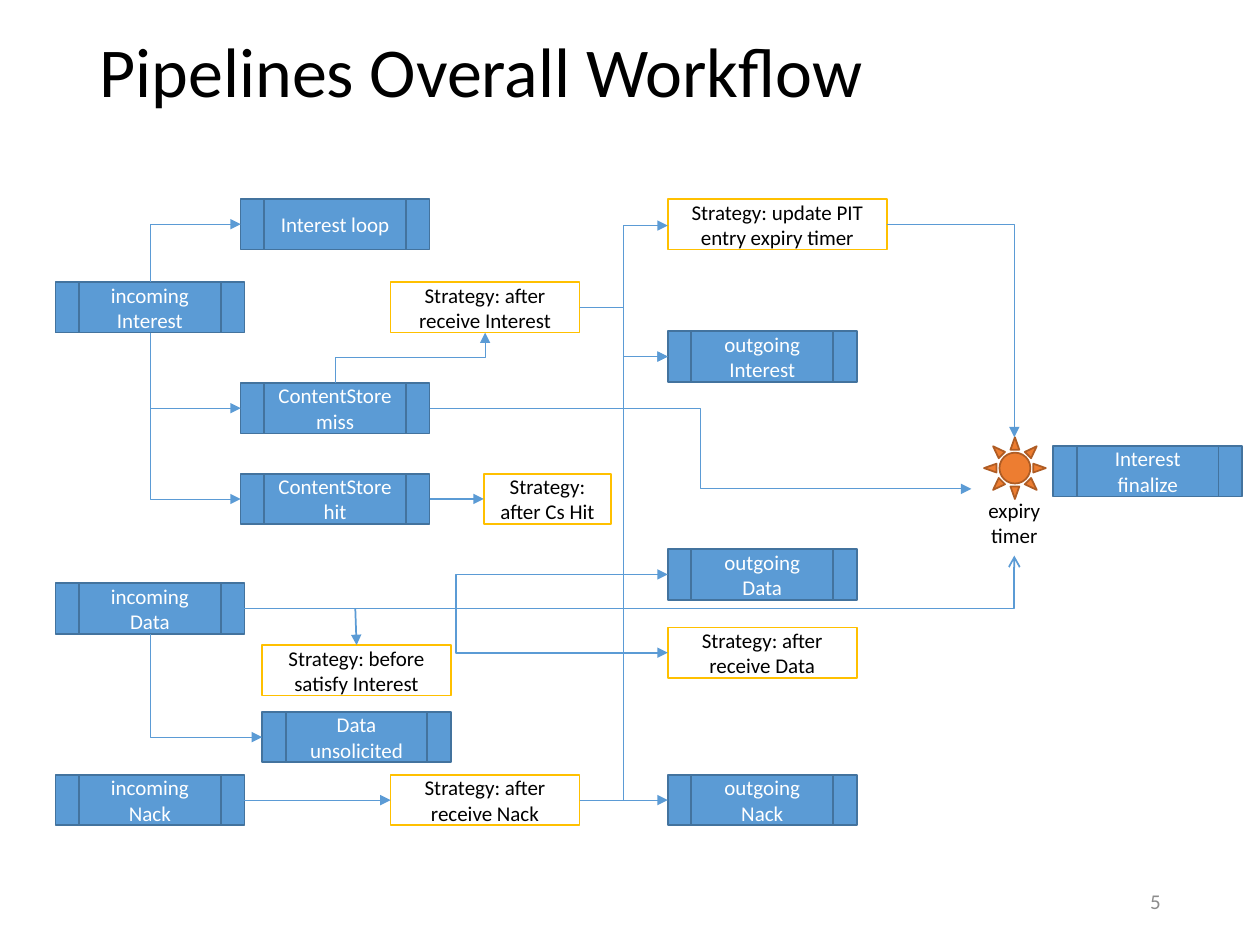
from lxml.etree import SubElement
from pptx import Presentation
from pptx.dml.color import RGBColor
from pptx.enum.shapes import MSO_CONNECTOR, MSO_SHAPE
from pptx.enum.text import MSO_ANCHOR, PP_ALIGN
from pptx.oxml.ns import qn
from pptx.util import Inches, Pt

BLACK = RGBColor(0, 0, 0)
WHITE = RGBColor(255, 255, 255)
GRAY = RGBColor(0x8C, 0x8C, 0x8C)
BLUE = RGBColor(0x5B, 0x9B, 0xD5)
DARK_BLUE = RGBColor(0x43, 0x73, 0x9E)
GOLD = RGBColor(0xFF, 0xC0, 0x00)
ORANGE = RGBColor(0xED, 0x7D, 0x31)
BROWN = RGBColor(0xAF, 0x5C, 0x24)

COLUMNS = {"in": 0.44, "store": 1.91, "data": 2.08, "strategy": 3.1,
           "hit": 3.84, "out": 5.3, "final": 8.36}
ROWS = {"loop": 1.58, "interest": 2.24, "send": 2.63, "miss": 3.04,
        "final": 3.54, "hit": 3.76, "out data": 4.36, "data": 4.63,
        "receive": 4.98, "satisfy": 5.12, "unsolicited": 5.65, "nack": 6.15}
BOX_WIDTH, BOX_HEIGHT = 1.5, 0.4

PIPELINES = [
    ("incoming Interest", "in", "interest"),
    ("incoming Data", "in", "data"),
    ("incoming Nack", "in", "nack"),
    ("Interest loop", "store", "loop"),
    ("ContentStore miss", "store", "miss"),
    ("ContentStore hit", "store", "hit"),
    ("Data unsolicited", "data", "unsolicited"),
    ("outgoing Interest", "out", "send"),
    ("outgoing Data", "out", "out data"),
    ("outgoing Nack", "out", "nack"),
    ("Interest finalize", "final", "final"),
]
STRATEGIES = [
    ("Strategy: after receive Interest", "strategy", "interest", BOX_WIDTH),
    ("Strategy: before satisfy Interest", "data", "satisfy", BOX_WIDTH),
    ("Strategy: after receive Nack", "strategy", "nack", BOX_WIDTH),
    ("Strategy: after Cs Hit", "hit", "hit", 1.01),
    ("Strategy: after receive Data", "out", "receive", BOX_WIDTH),
    ("Strategy: update PIT entry expiry timer", "out", "loop", 1.74),
]
SIDES = {"left": (0, 0.5), "right": (1, 0.5), "top": (0.5, 0), "bottom": (0.5, 1)}
TIMER_TOP, TIMER_LEFT, TIMER_BOTTOM = (8.05, 3.47), (7.71, 3.88), (8.05, 4.41)
DATA_BRANCH = (2.82, 4.83)

ARROWS = [
    ("incoming Interest", "top", "Interest loop", "left", "corner", True, 0.5),
    ("incoming Interest", "bottom", "ContentStore miss", "left", "corner", True, 0.5),
    ("incoming Interest", "bottom", "ContentStore hit", "left", "corner", True, 0.5),
    ("ContentStore miss", "top", "Strategy: after receive Interest", "bottom", "step", True, 0.5),
    ("ContentStore miss", "right", TIMER_LEFT, None, "step", False, 0.5),
    ("ContentStore hit", "right", "Strategy: after Cs Hit", "left", "line", False, 1),
    ("Strategy: after receive Interest", "right", (5.3, 1.79), None, "step", False, 0.5),
    ("Strategy: after receive Interest", "right", "outgoing Interest", "left", "step", False, 0.5),
    ("Strategy: update PIT entry expiry timer", "right", TIMER_TOP, None, "corner", False, 0.5),
    ("incoming Data", "bottom", "Data unsolicited", "left", "corner", True, 0.5),
    ("incoming Data", "right", "outgoing Data", "left", "step", False, 1),
    ("incoming Data", "right", "Strategy: after receive Data", "left", "step", False, 1),
    (DATA_BRANCH, None, "Strategy: before satisfy Interest", "top", "line", False, 1),
    ("incoming Data", "right", TIMER_BOTTOM, None, "corner", False, 1),
    ("incoming Nack", "right", "Strategy: after receive Nack", "left", "line", False, 0.5),
    ("Strategy: after receive Nack", "right", "outgoing Nack", "left", "line", False, 0.5),
    ("Strategy: after receive Nack", "right", "outgoing Interest", "left", "step", False, 0.5),
]


def write(box, text, size, color, align, anchor=MSO_ANCHOR.MIDDLE, wrap=True):
    frame = box.text_frame
    frame.word_wrap = wrap
    frame.vertical_anchor = anchor
    para = frame.paragraphs[0]
    para.text = text
    para.alignment = align
    for span in para.runs:
        for name, value in {"name": "Calibri", "size": Pt(size)}.items():
            setattr(span.font, name, value)
        span.font.color.rgb = color


def add_filled(shapes, kind, frame, fill, line):
    shape = shapes.add_shape(kind, *map(Inches, frame))
    shape.shadow.inherit = False
    shape.fill.solid()
    shape.fill.fore_color.rgb = fill
    shape.line.color.rgb = line
    shape.line.width = Pt(1)
    return shape


def add_node(page, kind, text, column, row, width, fill, line, color):
    frame = (COLUMNS[column], ROWS[row], width, BOX_HEIGHT)
    shape = add_filled(page.shapes, kind, frame, fill, line)
    write(shape, text, 12, color, PP_ALIGN.CENTER)
    return shape


def add_nodes(page):
    nodes = {}
    for text, column, row in PIPELINES:
        nodes[text] = add_node(page, MSO_SHAPE.FLOWCHART_PREDEFINED_PROCESS, text,
                               column, row, BOX_WIDTH, BLUE, DARK_BLUE, WHITE)
    for text, column, row, width in STRATEGIES:
        nodes[text] = add_node(page, MSO_SHAPE.RECTANGLE, text,
                               column, row, width, WHITE, GOLD, BLACK)
    return nodes


def locate(nodes, place, side):
    if side is None:
        return tuple(map(Inches, place))
    shape, (across, down) = nodes[place], SIDES[side]
    return shape.left + across * shape.width, shape.top + down * shape.height


def turn_back(point, center):
    return center[0] + point[1] - center[1], center[1] - point[0] + center[0]


def add_arrow(page, begin, end, route, vertical_first, width, head):
    if vertical_first:
        center = [(first + last) / 2 for first, last in zip(begin, end)]
        begin, end = turn_back(begin, center), turn_back(end, center)
    kind = MSO_CONNECTOR.STRAIGHT if route == "line" else MSO_CONNECTOR.ELBOW
    arrow = page.shapes.add_connector(kind, *map(round, (*begin, *end)))
    arrow.line.color.rgb = BLUE
    arrow.line.width = Pt(width)
    properties = arrow.element.spPr
    if vertical_first:
        properties.find(qn("a:xfrm")).set("rot", "5400000")
    if route == "corner":
        properties.find(qn("a:prstGeom")).set("prst", "bentConnector2")
    SubElement(properties.find(qn("a:ln")), qn("a:tailEnd"), type=head)
    SubElement(properties, qn("a:effectLst"))


def add_timer(page):
    group = page.shapes.add_group_shape()
    add_filled(group.shapes, MSO_SHAPE.SUN, (7.81, 3.47, 0.49, 0.49), ORANGE, BROWN)
    label = group.shapes.add_textbox(*map(Inches, (7.74, 3.9, 0.62, 0.5)))
    write(label, "expiry\vtimer", 12, BLACK, PP_ALIGN.CENTER, MSO_ANCHOR.TOP, False)


def add_title(page):
    title = page.shapes.title
    frame = {"left": 0.69, "top": 0.02, "width": 8.62, "height": 1.14}
    for name, value in frame.items():
        setattr(title, name, Inches(value))
    write(title, "Pipelines Overall Workflow", 40, BLACK, PP_ALIGN.LEFT)
    title.text_frame.paragraphs[0].line_spacing = 0.9


def add_page_number(page):
    box = page.shapes.add_textbox(*map(Inches, (7.06, 6.95, 2.25, 0.4)))
    write(box, "5", 12, GRAY, PP_ALIGN.RIGHT)


def main():
    deck = Presentation()
    deck.slide_width, deck.slide_height = Inches(10), Inches(7.5)
    page = deck.slides.add_slide(deck.slide_layouts[5])
    add_title(page)
    add_page_number(page)
    nodes = add_nodes(page)
    add_timer(page)
    for source, source_side, target, target_side, route, vertical_first, width in ARROWS:
        head = "arrow" if target == TIMER_BOTTOM else "triangle"
        add_arrow(page, locate(nodes, source, source_side),
                  locate(nodes, target, target_side), route, vertical_first, width, head)
    deck.save("out.pptx")


if __name__ == "__main__":
    main()
